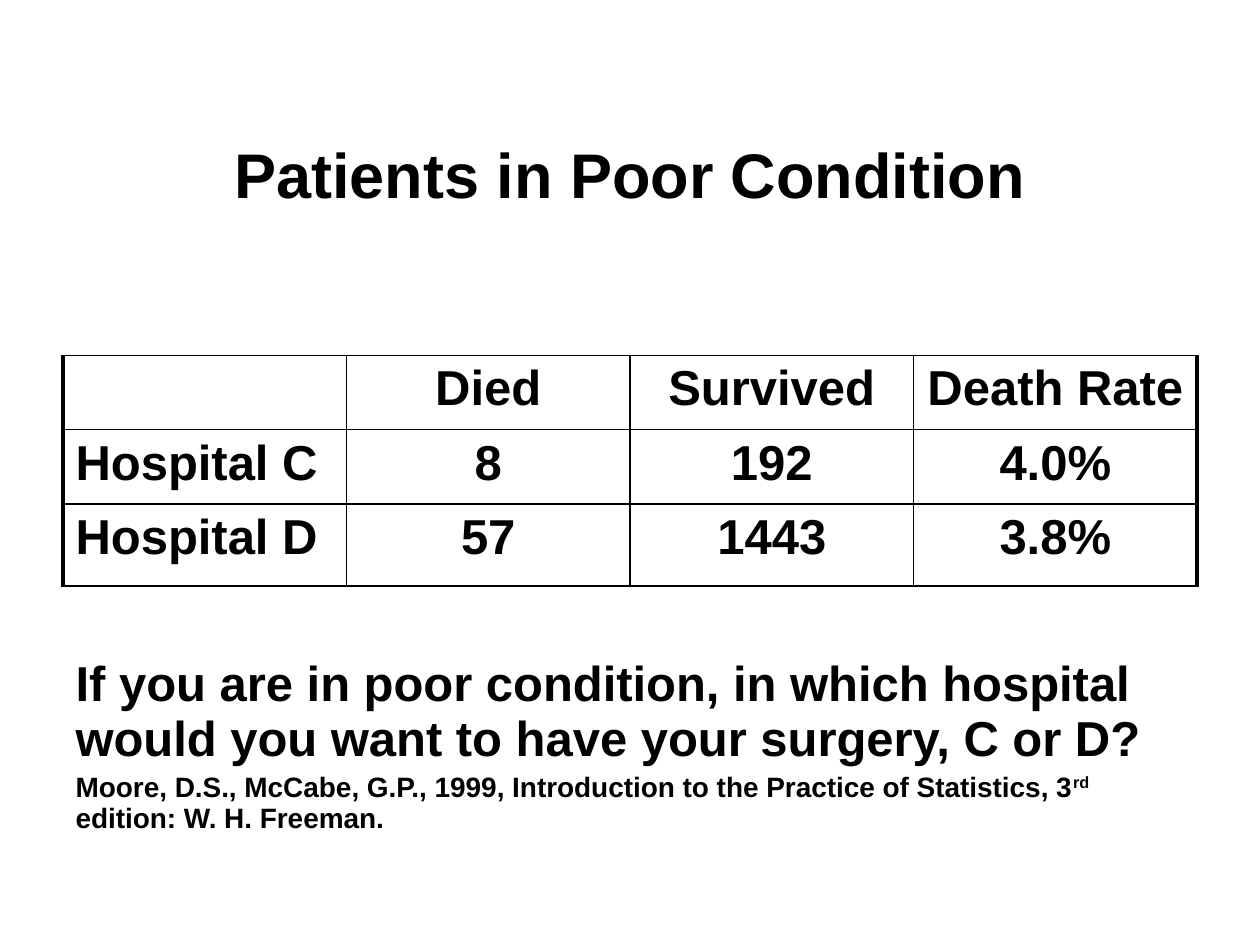
from dataclasses import dataclass

from lxml.etree import SubElement
from pptx import Presentation
from pptx.dml.color import RGBColor
from pptx.enum.text import MSO_ANCHOR, PP_ALIGN
from pptx.oxml.ns import qn
from pptx.table import Table, _Cell
from pptx.text.text import _Paragraph
from pptx.util import Inches, Pt


@dataclass(frozen=True)
class Theme:
    font: str = "Arial"
    ink: str = "000000"
    title: int = 36
    body: int = 28
    cite: int = 16
    thin: float = 1
    thick: float = 2.25


@dataclass(frozen=True)
class Row:
    label: str
    values: tuple[str, str, str]


THEME = Theme()
ROWS = (
    Row("", ("Died", "Survived", "Death Rate")),
    Row("Hospital C", ("8", "192", "4.0%")),
    Row("Hospital D", ("57", "1443", "3.8%")),
)
QUESTION = ("If you are in poor condition, in which hospital would you want "
            "to have your surgery, C or D?")
CITATION = (
    ("Moore, D.S., McCabe, G.P., 1999, Introduction to the Practice of Statistics, 3", 0),
    ("rd", 30000),
    (" edition: W. H. Freeman.", 0),
)
COL_WIDTH = 2.25
ROW_HEIGHTS = (2.32, 0.59, 0.59, 0.65, 2.05)


def add_text(p: _Paragraph, text: str, *, size: int = THEME.body,
             align: PP_ALIGN = PP_ALIGN.LEFT, baseline: int = 0) -> None:
    p.alignment = align
    r = p.add_run()
    r.text = text
    r.font.name = THEME.font
    r.font.size = Pt(size)
    r.font.bold = True
    r.font.color.rgb = RGBColor.from_string(THEME.ink)
    if baseline:
        r.font._element.set("baseline", str(baseline))


def set_borders(cell: _Cell, *, left: float = 0, right: float = 0,
                top: float = 0, bottom: float = 0) -> None:
    tc_pr = cell._tc.get_or_add_tcPr()
    for side, width in zip("LRTB", (left, right, top, bottom)):
        ln = SubElement(tc_pr, qn(f"a:ln{side}"), w=str(Pt(width)))
        if width:
            fill = SubElement(ln, qn("a:solidFill"))
            SubElement(fill, qn("a:srgbClr"), val=THEME.ink)
        else:
            SubElement(ln, qn("a:noFill"))
    cell.fill.background()


def fill_row(table: Table, index: int, row: Row) -> None:
    last = len(row.values)
    for col, text in enumerate((row.label, *row.values)):
        cell = table.cell(index, col)
        set_borders(cell, top=THEME.thin, bottom=THEME.thin,
                    left=THEME.thin if col else THEME.thick,
                    right=THEME.thick if col == last else THEME.thin)
        add_text(cell.text_frame.paragraphs[0], text,
                 align=PP_ALIGN.CENTER if col else PP_ALIGN.LEFT)


def merge_row(table: Table, index: int, *, top: float = 0, bottom: float = 0) -> _Cell:
    last = len(table.columns) - 1
    for col in range(last + 1):
        set_borders(table.cell(index, col), top=top, bottom=bottom)
    cell = table.cell(index, 0)
    cell.merge(table.cell(index, last))
    return cell


def add_hospital_table(s) -> None:
    cols = 4
    table = s.shapes.add_table(len(ROW_HEIGHTS), cols, Inches(0.5), Inches(0.5),
                               Inches(cols * COL_WIDTH), Inches(sum(ROW_HEIGHTS))).table
    table.first_row = False
    table.horz_banding = False
    for row, height in zip(table.rows, ROW_HEIGHTS):
        row.height = Inches(height)

    title = merge_row(table, 0, bottom=THEME.thin)
    title.vertical_anchor = MSO_ANCHOR.BOTTOM
    title.margin_bottom = Inches(1.14)
    add_text(title.text_frame.paragraphs[0], "Patients in Poor Condition",
             size=THEME.title, align=PP_ALIGN.CENTER)

    for index, row in enumerate(ROWS, start=1):
        fill_row(table, index, row)

    closing = merge_row(table, len(ROW_HEIGHTS) - 1, top=THEME.thin)
    closing.margin_top = Inches(0.57)
    tf = closing.text_frame
    add_text(tf.paragraphs[0], QUESTION)
    p = tf.add_paragraph()
    p.space_before = Pt(3)
    for text, baseline in CITATION:
        add_text(p, text, size=THEME.cite, baseline=baseline)


def main() -> None:
    prs = Presentation()
    prs.slide_width = Inches(10)
    prs.slide_height = Inches(7.5)
    s = prs.slides.add_slide(prs.slide_layouts[6])
    add_hospital_table(s)
    prs.save("out.pptx")


if __name__ == "__main__":
    main()
